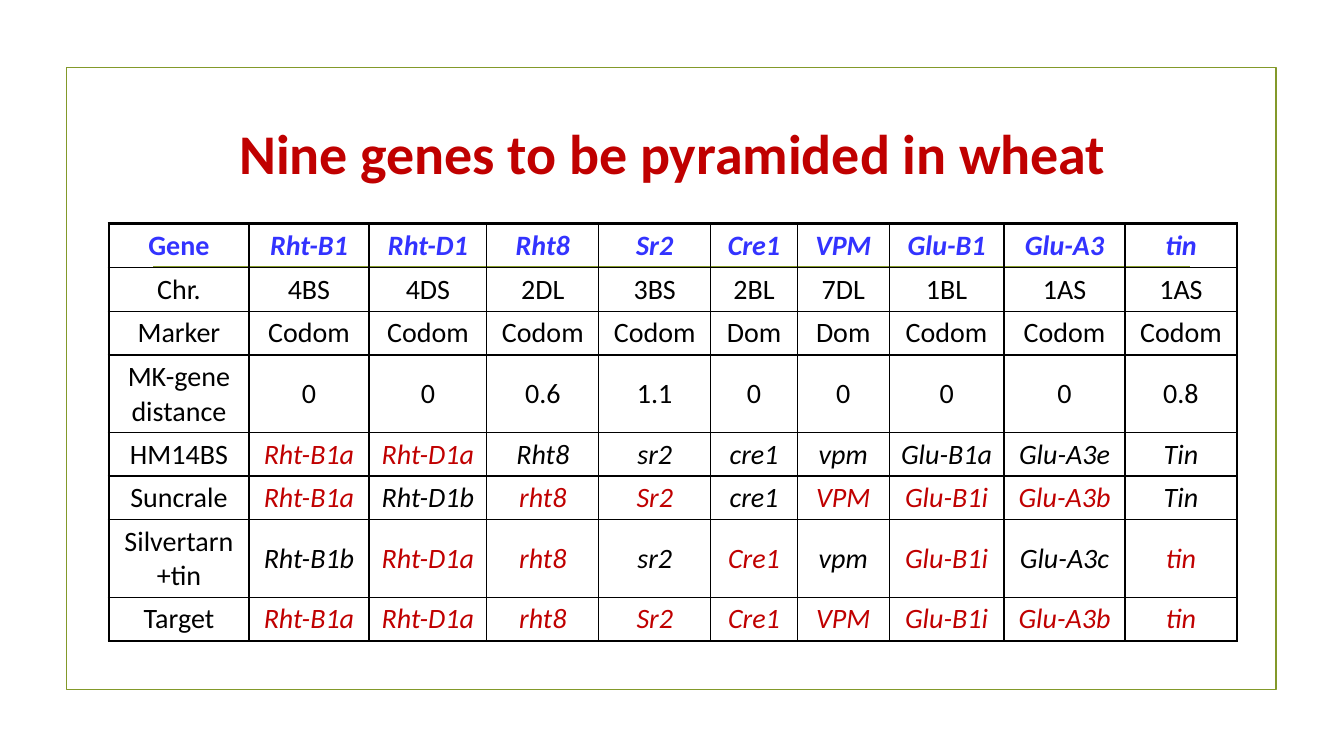
from lxml.etree import SubElement
from pptx import Presentation
from pptx.dml.color import RGBColor
from pptx.enum.shapes import MSO_CONNECTOR as Connector, MSO_SHAPE as Shape
from pptx.enum.text import MSO_ANCHOR as Anchor, PP_ALIGN as Align
from pptx.oxml.ns import qn
from pptx.util import Inches, Pt

GREEN, RED, BLUE, BLACK = "83992A", "C00000", "3333FF", "000000"
THIN, THICK = 1, 2.25

GENES = [
    "Gene Rht-B1 Rht-D1 Rht8 Sr2 Cre1 VPM Glu-B1 Glu-A3 tin".split(),
    "Chr. 4BS 4DS 2DL 3BS 2BL 7DL 1BL 1AS 1AS".split(),
    "Marker Codom Codom Codom Codom Dom Dom Codom Codom Codom".split(),
    ["MK-gene distance", *"0 0 0.6 1.1 0 0 0 0 0.8".split()],
    "HM14BS Rht-B1a Rht-D1a Rht8 sr2 cre1 vpm Glu-B1a Glu-A3e Tin".split(),
    "Suncrale Rht-B1a Rht-D1b rht8 Sr2 cre1 VPM Glu-B1i Glu-A3b Tin".split(),
    "Silvertarn+tin Rht-B1b Rht-D1a rht8 sr2 Cre1 vpm Glu-B1i Glu-A3c tin".split(),
    "Target Rht-B1a Rht-D1a rht8 Sr2 Cre1 VPM Glu-B1i Glu-A3b tin".split(),
]
FIRST_ALLELE_ROW = 4
COLUMN_WIDTHS = [1.39, 1.19, 1.17, 1.11, 1.11, 0.86, 0.91, 1.14, 1.2, 1.11]
ROW_HEIGHTS = [0.34, 0.34, 0.34, 0.61, 0.34, 0.34, 0.61, 0.34]


def color(code):
    return RGBColor.from_string(code)


def write(frame, text, code, **formats):
    """Put one centred line of text in a frame."""
    para = frame.paragraphs[0]
    para.alignment = Align.CENTER
    span = para.add_run()
    span.text = text
    span.font.color.rgb = color(code)
    for name, value in {"name": "Calibri", **formats}.items():
        setattr(span.font, name, value)


def add_border(cell, side, width):
    properties = cell._tc.get_or_add_tcPr()
    line = SubElement(properties, qn(f"a:ln{side}"), w=str(Pt(width)))
    fill = SubElement(line, qn("a:solidFill"))
    SubElement(fill, qn("a:srgbClr"), val=BLACK)


def draw_frame(page, left, top, width, height):
    # Outer border
    border = page.shapes.add_shape(
        Shape.RECTANGLE, Inches(left), Inches(top), Inches(width), Inches(height))
    border.shadow.inherit = False
    border.fill.background()

    # Rule across the page
    inset, rule_y = 0.86, Inches(top + 1.98)
    rule = page.shapes.add_connector(
        Connector.STRAIGHT, Inches(left + inset), rule_y,
        Inches(left + width - inset), rule_y)
    SubElement(rule._element.spPr, qn("a:effectLst"))

    for outline in (border.line, rule.line):
        outline.color.rgb = color(GREEN)
        outline.width = Pt(1.25)


def draw_title(page, left, top, width, height):
    box = page.shapes.add_textbox(
        Inches(left), Inches(top), Inches(width), Inches(height))
    frame = box.text_frame
    frame.word_wrap = True
    frame.vertical_anchor = Anchor.MIDDLE
    write(frame, "Nine genes to be pyramided in wheat", RED, size=Pt(40), bold=True)


def cell_style(row, column):
    """Alleles that match the target are red."""
    if row == 0:
        return BLUE, True, column > 0
    is_allele = row >= FIRST_ALLELE_ROW and column > 0
    matches = is_allele and GENES[row][column] == GENES[-1][column]
    return RED if matches else BLACK, False, is_allele


def draw_gene_table(page, left, top, width, height):
    last_row, last_column = len(GENES) - 1, len(COLUMN_WIDTHS) - 1
    table = page.shapes.add_table(
        len(GENES), len(COLUMN_WIDTHS), Inches(left), Inches(top),
        Inches(width), Inches(height)).table
    table.horz_banding = False
    for column, size in zip(table.columns, COLUMN_WIDTHS):
        column.width = Inches(size)
    for row, size in zip(table.rows, ROW_HEIGHTS):
        row.height = Inches(size)

    for r, texts in enumerate(GENES):
        for c, text in enumerate(texts):
            cell = table.cell(r, c)
            # Thick lines only round the outside
            edges = {"L": c == 0, "R": c == last_column,
                     "T": r == 0, "B": r == last_row}
            for side, outside in edges.items():
                add_border(cell, side, THICK if outside else THIN)
            cell.fill.background()
            cell.vertical_anchor = Anchor.MIDDLE
            cell.margin_left = cell.margin_right = Inches(0.11)
            cell.margin_top = cell.margin_bottom = Inches(0.05)
            code, bold, italic = cell_style(r, c)
            write(cell.text_frame, text, code, size=Pt(20), bold=bold, italic=italic)


def main():
    deck = Presentation()
    deck.slide_width, deck.slide_height = Inches(13.33), Inches(7.5)
    page = deck.slides.add_slide(deck.slide_layouts[6])
    draw_frame(page, 0.66, 0.67, 12, 6.17)
    draw_title(page, 1.42, 1.07, 10.5, 0.87)
    draw_gene_table(page, 1.08, 2.22, 11.18, 4.13)
    deck.save("out.pptx")


if __name__ == "__main__":
    main()
